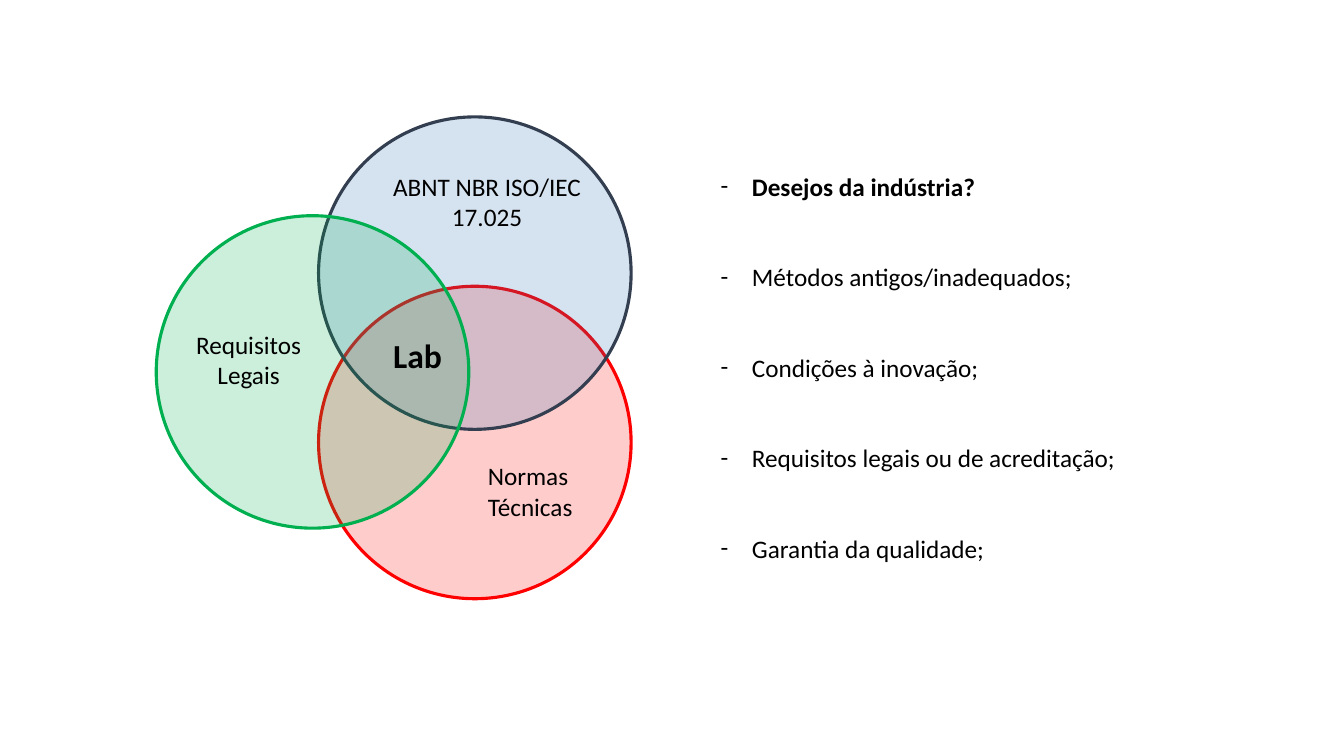
from dataclasses import dataclass

import pptx
import pptx.dml.color
import pptx.enum.shapes
import pptx.enum.text
import pptx.oxml
import pptx.oxml.ns
import pptx.slide
import pptx.util

Inches = pptx.util.Inches
Pt = pptx.util.Pt
LEFT = pptx.enum.text.PP_ALIGN.LEFT
CENTER = pptx.enum.text.PP_ALIGN.CENTER

DIAMETER = 3.1
CIRCLE_OPACITY = 20
BULLET_INDENT = 0.31
BULLET_GAP = 43
BODY_FORMAT = {"name": "Calibri", "size": Pt(18), "bold": False}
BOLD_FORMAT = BODY_FORMAT | {"bold": True}
CENTER_FORMAT = BOLD_FORMAT | {"size": Pt(24)}


@dataclass
class Circle:
    left: float
    top: float
    fill: str
    outline: str


@dataclass
class Line:
    text: str
    align: pptx.enum.text.PP_ALIGN = LEFT
    bullet: bool = False


@dataclass
class Label:
    left: float
    top: float
    width: float
    height: float
    lines: list[Line]
    format: dict
    wrap: bool = False


CIRCLES = [
    Circle(3.16, 2.84, "FF0000", "FF0000"),
    Circle(3.16, 1.16, "2E75B6", "333F50"),
    Circle(1.55, 2.14, "00B050", "00B050"),
]

LABELS = [
    Label(1.84, 3.22, 1.25, 0.71,
          [Line("Requisitos", CENTER), Line("Legais", CENTER)], BODY_FORMAT),
    Label(4.74, 4.52, 1.06, 0.71, [Line("Normas"), Line("Técnicas")], BODY_FORMAT),
    Label(3.8, 3.27, 0.69, 0.5, [Line("Lab")], CENTER_FORMAT),
    Label(3.8, 1.65, 2.08, 0.71,
          [Line("ABNT NBR ISO/IEC"), Line("17.025", CENTER)], BODY_FORMAT),
]

TOPICS = [
    "Desejos da indústria?",
    "Métodos antigos/inadequados;",
    "Condições à inovação;",
    "Requisitos legais ou de acreditação;",
    "Garantia da qualidade;",
]


def color(value: str) -> pptx.dml.color.RGBColor:
    return pptx.dml.color.RGBColor.from_string(value)


def draw_circle(page: pptx.slide.Slide, circle: Circle) -> None:
    shape = page.shapes.add_shape(
        pptx.enum.shapes.MSO_SHAPE.OVAL, Inches(circle.left), Inches(circle.top),
        Inches(DIAMETER), Inches(DIAMETER))
    shape.shadow.inherit = False
    shape.fill.solid()
    shape.fill.fore_color.rgb = color(circle.fill)
    shape.line.color.rgb = color(circle.outline)
    shape.line.width = Pt(2.25)
    # Transparency of the fill only
    fill_color = shape.fill._xPr.find(".//" + pptx.oxml.ns.qn("a:srgbClr"))
    alpha = pptx.oxml.parse_xml(
        f'<a:alpha {pptx.oxml.ns.nsdecls("a")} val="{CIRCLE_OPACITY * 1000}"/>')
    fill_color.append(alpha)


def add_dash(para) -> None:
    properties = para._p.get_or_add_pPr()
    indent = Inches(BULLET_INDENT)
    properties.set("marL", str(indent))
    properties.set("indent", str(-indent))
    namespace = pptx.oxml.ns.nsdecls("a")
    properties.append(pptx.oxml.parse_xml(f'<a:buFont {namespace} typeface="Calibri"/>'))
    properties.append(pptx.oxml.parse_xml(f'<a:buChar {namespace} char="-"/>'))


def draw_label(page: pptx.slide.Slide, label: Label) -> None:
    box = page.shapes.add_textbox(
        Inches(label.left), Inches(label.top), Inches(label.width), Inches(label.height))
    frame = box.text_frame
    frame.word_wrap = label.wrap
    for index, line in enumerate(label.lines):
        para = frame.paragraphs[0] if index == 0 else frame.add_paragraph()
        para.alignment = line.align
        if line.bullet:
            if index > 0:
                para.space_before = Pt(BULLET_GAP)
            add_dash(para)
        span = para.add_run()
        span.text = line.text
        is_heading = line.bullet and index == 0
        for name, value in (BOLD_FORMAT if is_heading else label.format).items():
            setattr(span.font, name, value)
        span.font.color.rgb = color("000000")


def main() -> None:
    deck = pptx.Presentation()
    deck.slide_width = Inches(13.33)
    deck.slide_height = Inches(7.5)
    page = deck.slides.add_slide(deck.slide_layouts[6])

    # Overlapping circles and their labels
    for circle in CIRCLES:
        draw_circle(page, circle)
    for label in LABELS:
        draw_label(page, label)

    # Topic list with a bold first line
    topics = [Line(topic, bullet=True) for topic in TOPICS]
    draw_label(page, Label(7.05, 1.65, 4.2, 4.04, topics, BODY_FORMAT, wrap=True))

    deck.save("out.pptx")


if __name__ == "__main__":
    main()
